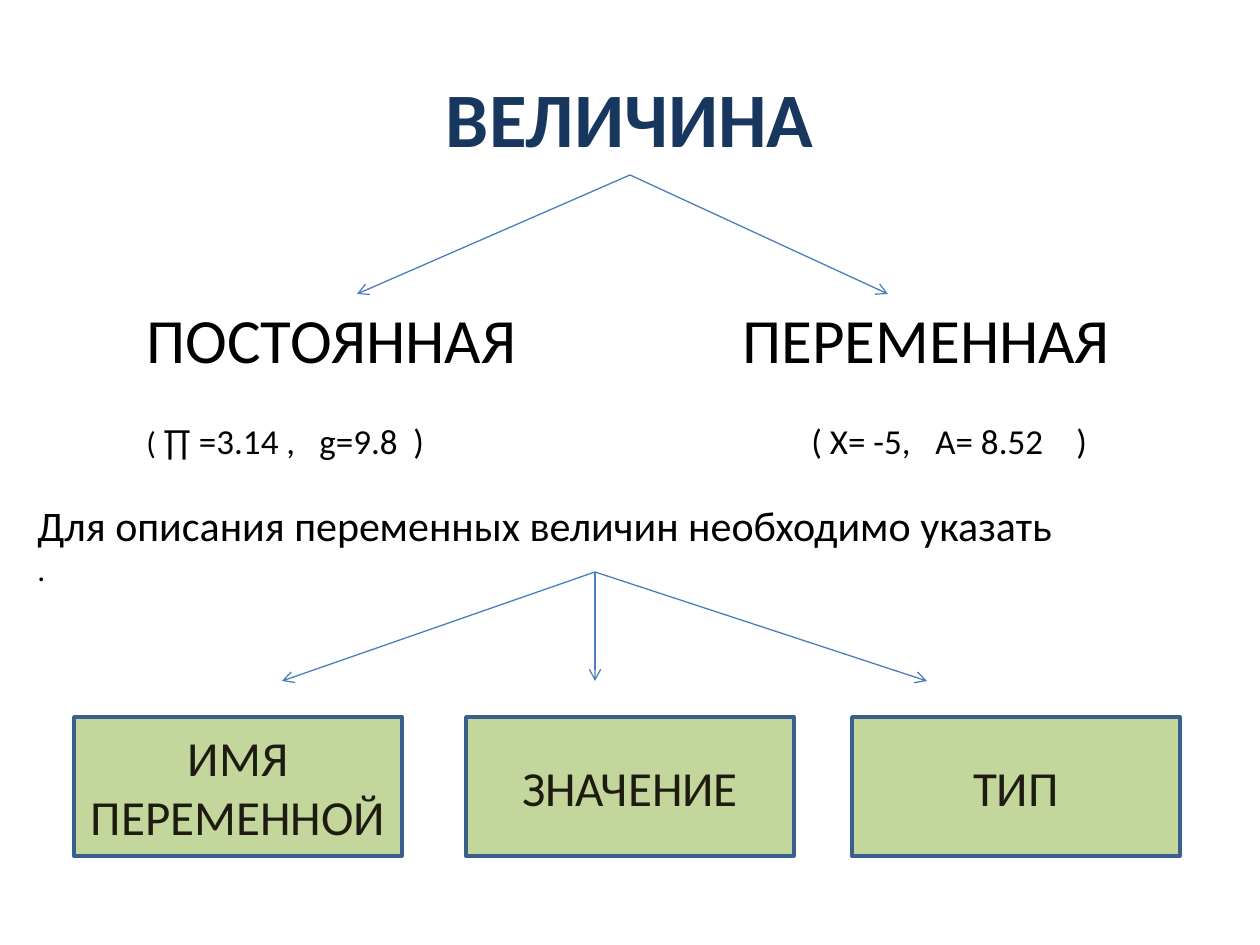
from lxml.etree import SubElement
from pptx import Presentation
from pptx.dml.color import RGBColor
from pptx.enum.shapes import MSO_CONNECTOR, MSO_SHAPE
from pptx.enum.text import MSO_ANCHOR, PP_ALIGN
from pptx.oxml.ns import qn
from pptx.util import Pt

EMU_PER_PX = 914400 / 126
BLACK, NAVY, INK = "000000", "17375E", "1E1C11"
GREEN, BORDER, ARROW = "C3D69B", "3A5F8C", "4B7EBC"


def px(length):
    return round(length * EMU_PER_PX)


def color(hex_code):
    return RGBColor.from_string(hex_code)


def write(frame, *paragraphs, hue=BLACK, bold=False, align=PP_ALIGN.LEFT,
          anchor=MSO_ANCHOR.TOP, tabs=()):
    """Fill a text frame; each paragraph is a list of (text, point size) runs."""
    frame.word_wrap = True
    frame.vertical_anchor = anchor
    for index, runs in enumerate(paragraphs):
        paragraph = frame.add_paragraph() if index else frame.paragraphs[0]
        paragraph.alignment = align
        if tabs:
            stops = SubElement(paragraph._p.get_or_add_pPr(), qn("a:tabLst"))
            for position in tabs:
                SubElement(stops, qn("a:tab"), pos=str(px(position)), algn="l")
        for text, size in runs:
            run = paragraph.add_run()
            run.text = text
            run.font.name = "Calibri"
            run.font.size = Pt(size)
            run.font.bold = bold
            run.font.color.rgb = color(hue)


def add_label(slide, left, top, width, height, *paragraphs, **text_format):
    label = slide.shapes.add_textbox(px(left), px(top), px(width), px(height))
    write(label.text_frame, *paragraphs, **text_format)


def add_arrows(slide, start, ends):
    """Fan arrows out from one point."""
    for end in ends:
        arrow = slide.shapes.add_connector(
            MSO_CONNECTOR.STRAIGHT, *map(px, (*start, *end)))
        arrow.line.color.rgb = color(ARROW)
        arrow.line.width = Pt(0.75)
        SubElement(arrow.line._get_or_add_ln(), qn("a:tailEnd"), type="arrow")
        SubElement(arrow._element.spPr, qn("a:effectLst"))


def add_title(slide, left, top, width, height):
    title = slide.shapes.title
    title.left, title.top = px(left), px(top)
    title.width, title.height = px(width), px(height)
    write(title.text_frame, [("ВЕЛИЧИНА", 44)], hue=NAVY, bold=True,
          align=PP_ALIGN.CENTER, anchor=MSO_ANCHOR.MIDDLE)


def add_kinds(slide, left, top, width):
    """Constant and variable quantities, with examples below."""
    add_arrows(slide, (left + 496, top),
               [(left + 223, top + 119), (left + 754, top + 119)])
    for offset, kind in ((0, "ПОСТОЯННАЯ"), (596, "ПЕРЕМЕННАЯ")):
        add_label(slide, left + offset, top + 119, 446, 89, [(kind, 36)])
    add_label(slide, left, top + 238, width, 55,
              [("( ", 18),
               ("∏ =3.14 ,\tg=9.8\t)\t( X= -5,\tА= 8.52\t)", 20)],
              tabs=(173, 267, 665, 789, 930))


def add_description(slide, left, top, width):
    """The three things that describe a variable."""
    add_label(slide, left, top, width, 102,
              [("Для описания переменных величин необходимо указать", 24)],
              [(".", 18)])
    add_arrows(slide, (left + 570, top + 79),
               [(left + x, top + 188) for x in (257, 570, 902)])
    parts = ((49, "ИМЯ ПЕРЕМЕННОЙ"), (441, "ЗНАЧЕНИЕ"), (827, "ТИП"))
    for offset, part in parts:
        card = slide.shapes.add_shape(
            MSO_SHAPE.RECTANGLE, px(left + offset), px(top + 224), px(328), px(139))
        card.shadow.inherit = False
        card.fill.solid()
        card.fill.fore_color.rgb = color(GREEN)
        card.line.color.rgb = color(BORDER)
        card.line.width = Pt(2)
        write(card.text_frame, [(part, 28)], hue=INK,
              align=PP_ALIGN.CENTER, anchor=MSO_ANCHOR.MIDDLE)


def main():
    presentation = Presentation()
    presentation.slide_width, presentation.slide_height = px(1260), px(945)
    slide = presentation.slides.add_slide(presentation.slide_layouts[5])
    add_title(slide, 63, 38, 1134, 157)
    add_kinds(slide, 134, 175, 1002)
    add_description(slide, 25, 493, 1235)
    presentation.save("out.pptx")


if __name__ == "__main__":
    main()
